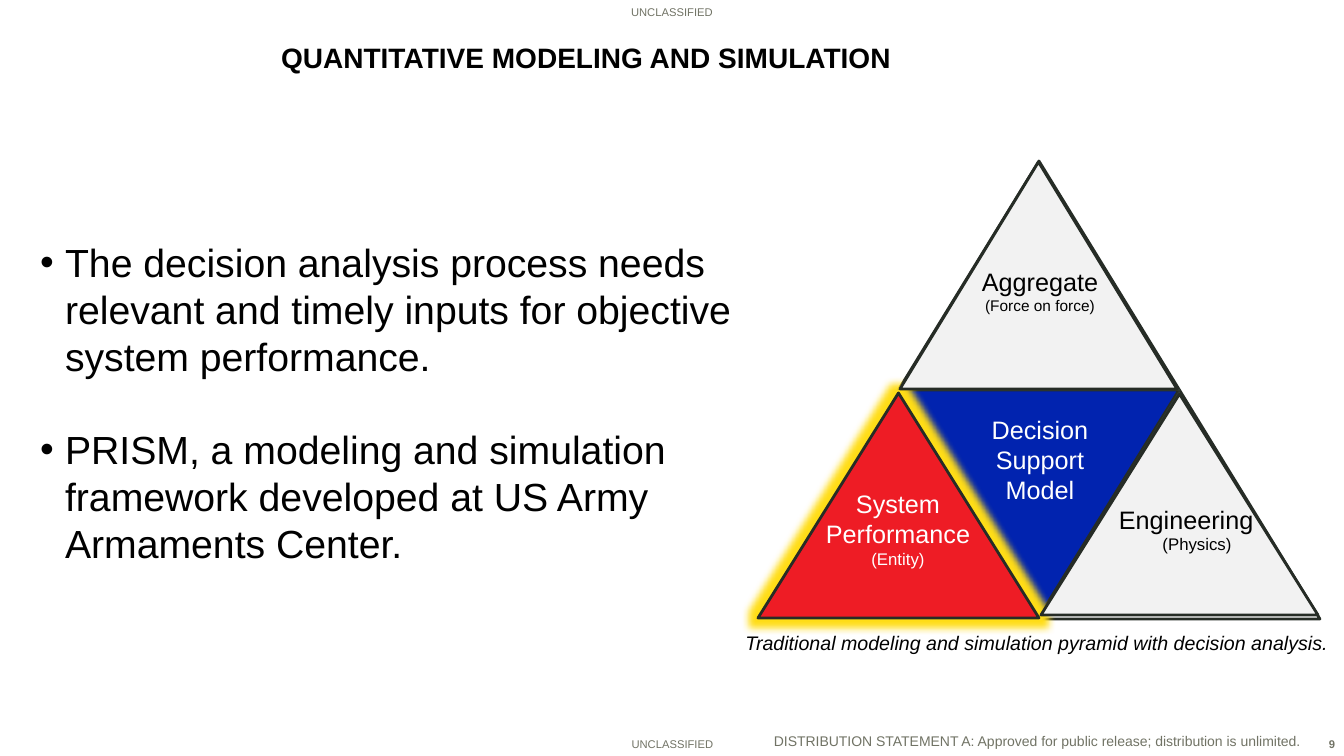
import dataclasses

import pptx
import pptx.dml.color
import pptx.enum.shapes
import pptx.enum.text
import pptx.oxml
import pptx.oxml.ns
import pptx.util
from lxml import etree

SCALE = 914400 / 100.8  # EMU in one px
ALIGN = pptx.enum.text.PP_ALIGN
ANCHOR = pptx.enum.text.MSO_ANCHOR
TRIANGLE = pptx.enum.shapes.MSO_SHAPE.ISOSCELES_TRIANGLE


@dataclasses.dataclass(frozen=True)
class Theme:
    font: str = "Arial"
    black: str = "000000"
    white: str = "FFFFFF"
    grey: str = "717365"
    outline: str = "262C26"
    divider: str = "323B32"
    blue: str = "0123AF"
    red: str = "EE1C25"
    pale: str = "F2F2F2"
    glow: str = "FFDD17"
    title: int = 20
    body: int = 28
    label: int = 18
    caption: int = 14
    detail: int = 12
    small_detail: int = 11
    statement: int = 10
    marking: int = 8


THEME = Theme()


def px(length):
    return pptx.util.Emu(round(length * SCALE))


def rgb(value):
    return pptx.dml.color.RGBColor.from_string(value)


def format_para(para, size, color, align=ALIGN.LEFT, bold=False, italic=False):
    para.alignment = align
    for span in para.runs:
        font = span.font
        font.name, font.size = THEME.font, pptx.util.Pt(size)
        font.bold, font.italic = bold, italic
        font.color.rgb = rgb(color)


def move(shape, box):
    shape.left, shape.top, shape.width, shape.height = map(px, box)


def add_text(page, box, lines, color, align=ALIGN.CENTER, anchor=ANCHOR.TOP, **style):
    """Add a text box; lines holds (text, size) pairs."""
    frame = page.shapes.add_textbox(*map(px, box)).text_frame
    frame.word_wrap = True
    frame.vertical_anchor = anchor
    frame.text = "\n".join(text for text, size in lines)
    for para, (text, size) in zip(frame.paragraphs, lines):
        format_para(para, size, color, align, **style)


def add_triangle(page, box, fill=None):
    triangle = page.shapes.add_shape(TRIANGLE, *map(px, box))
    triangle.shadow.inherit = False
    if fill:
        triangle.fill.solid()
        triangle.fill.fore_color.rgb = rgb(fill)
    else:
        triangle.fill.background()
    triangle.line.color.rgb = rgb(THEME.outline)
    triangle.line.width = pptx.util.Pt(2)
    return triangle


def add_glow(shape, radius, color):
    effects = shape._element.spPr.find(pptx.oxml.ns.qn("a:effectLst"))
    glow = etree.SubElement(effects, pptx.oxml.ns.qn("a:glow"), rad=str(px(radius)))
    etree.SubElement(glow, pptx.oxml.ns.qn("a:srgbClr"), val=color)


def add_divider(page, start, end):
    straight = pptx.enum.shapes.MSO_CONNECTOR.STRAIGHT
    divider = page.shapes.add_connector(straight, *map(px, start + end))
    divider.line.color.rgb = rgb(THEME.divider)
    divider.line.width = pptx.util.Pt(0.75)
    etree.SubElement(divider._element.spPr, pptx.oxml.ns.qn("a:effectLst"))


def set_bullet(para, indent):
    properties = para._p.get_or_add_pPr()
    properties.set("marL", str(px(indent)))
    properties.set("indent", str(-px(indent)))
    etree.SubElement(properties, pptx.oxml.ns.qn("a:buChar"), char="•")


def place_title(page, box):
    title = page.shapes.title
    move(title, box)
    frame = title.text_frame
    frame.text = "QUANTITATIVE MODELING AND SIMULATION"
    frame.vertical_anchor = ANCHOR.MIDDLE
    format_para(frame.paragraphs[0], THEME.title, THEME.black, bold=True)


def place_body(page, box):
    body = page.placeholders[1]
    move(body, box)
    frame = body.text_frame
    frame.auto_size = pptx.enum.text.MSO_AUTO_SIZE.NONE
    frame.text = (
        "The decision analysis process needs relevant and timely inputs "
        "for objective system performance.\n"
        "PRISM, a modeling and simulation framework developed at US Army "
        "Armaments Center."
    )
    for number, para in enumerate(frame.paragraphs):
        set_bullet(para, 25)
        para.space_before = pptx.util.Pt(33 if number else 0)
        format_para(para, THEME.body, THEME.black)


def place_pyramid(page, box):
    left, top, width, height = box
    middle, right, bottom = left + width // 2, left + width, top + height
    waist = top + height // 2
    quarter = width // 4

    # Central inverted triangle, outer outline and dividers
    center = add_triangle(page, (middle - 139, waist, 279, 226), THEME.blue)
    center.rotation = 180
    add_triangle(page, box)
    corners = [(middle - quarter, waist), (middle, bottom), (right - quarter, waist)]
    for start, end in zip(corners, corners[1:] + corners[:1]):
        add_divider(page, start, end)

    # Corner triangles
    system = add_triangle(page, (left, waist + 3, 281, 225), THEME.red)
    add_glow(system, 15, THEME.glow)
    add_triangle(page, (middle + 2, waist + 4, 277, 221), THEME.pale)
    add_triangle(page, (middle - 139, top + 1, 277, 227), THEME.pale)

    # Labels
    label, detail = THEME.label, THEME.detail
    add_text(page, (middle - 87, waist + 19, 176, 102),
             [("Decision Support", label), ("Model", label)], THEME.white)
    add_text(page, (left + 52, waist + 93, 176, 95),
             [("System Performance", label), ("(Entity)", detail)], THEME.white)
    add_text(page, (middle - 87, top + 100, 176, 61),
             [("Aggregate", label), ("(Force on force)", THEME.small_detail)], THEME.black)
    engineering = (middle + 70, waist + 109, 176, 61)
    add_text(page, engineering, [("Engineering", label)], THEME.black, ALIGN.LEFT)
    physics = (middle + 70, waist + 139, 176, 31)
    add_text(page, physics, [("(Physics)", detail)], THEME.black)

    # Caption
    add_text(page, (left - 26, bottom + 7, 610, 34),
             [("Traditional modeling and simulation pyramid with decision analysis.",
               THEME.caption)], THEME.black, italic=True)


def place_markings(page, box):
    left, top, width, height = box
    bottom = top + height
    for marking in ((left, top, width, 24), (left + 202, bottom - 24, 941, 24)):
        add_text(page, marking, [("UNCLASSIFIED", THEME.marking)], THEME.grey,
                 anchor=ANCHOR.BOTTOM)
    add_text(page, (left + 1284, bottom - 24, 61, 24), [("9", THEME.marking)],
             THEME.grey, ALIGN.RIGHT, bold=True)
    add_text(page, (left + 764, bottom - 46, 574, 44),
             [("DISTRIBUTION STATEMENT A: Approved for public release; "
               "distribution is unlimited.", THEME.statement)],
             THEME.grey, ALIGN.LEFT, ANCHOR.BOTTOM)


def main():
    deck = pptx.Presentation()
    deck.slide_width, deck.slide_height = px(1344), px(756)
    page = deck.slides.add_slide(deck.slide_layouts[1])
    place_markings(page, (0, 0, 1344, 756))
    place_title(page, (271, 30, 813, 55))
    place_body(page, (30, 233, 760, 454))
    place_pyramid(page, (758, 161, 562, 458))
    deck.save("out.pptx")


if __name__ == "__main__":
    main()
